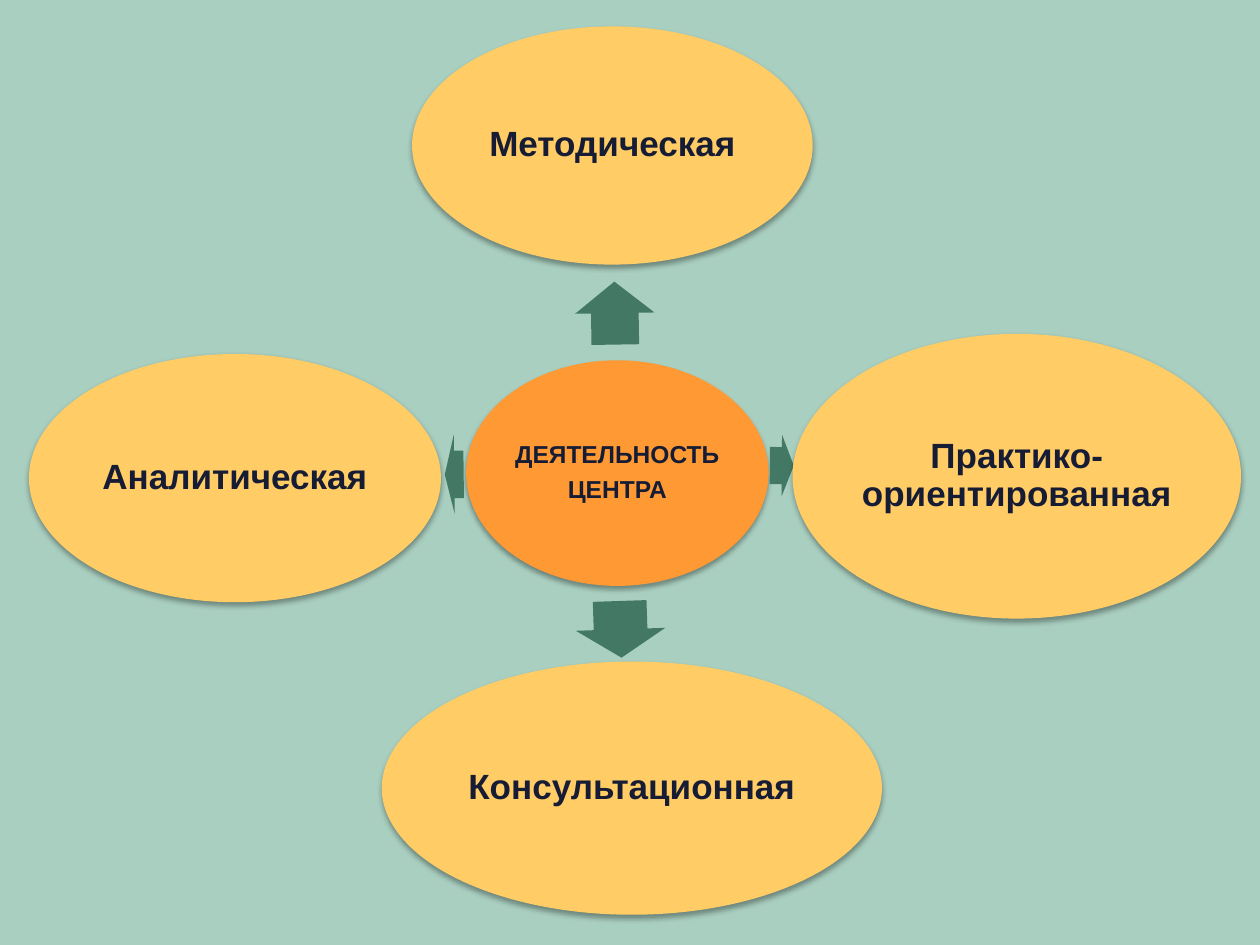
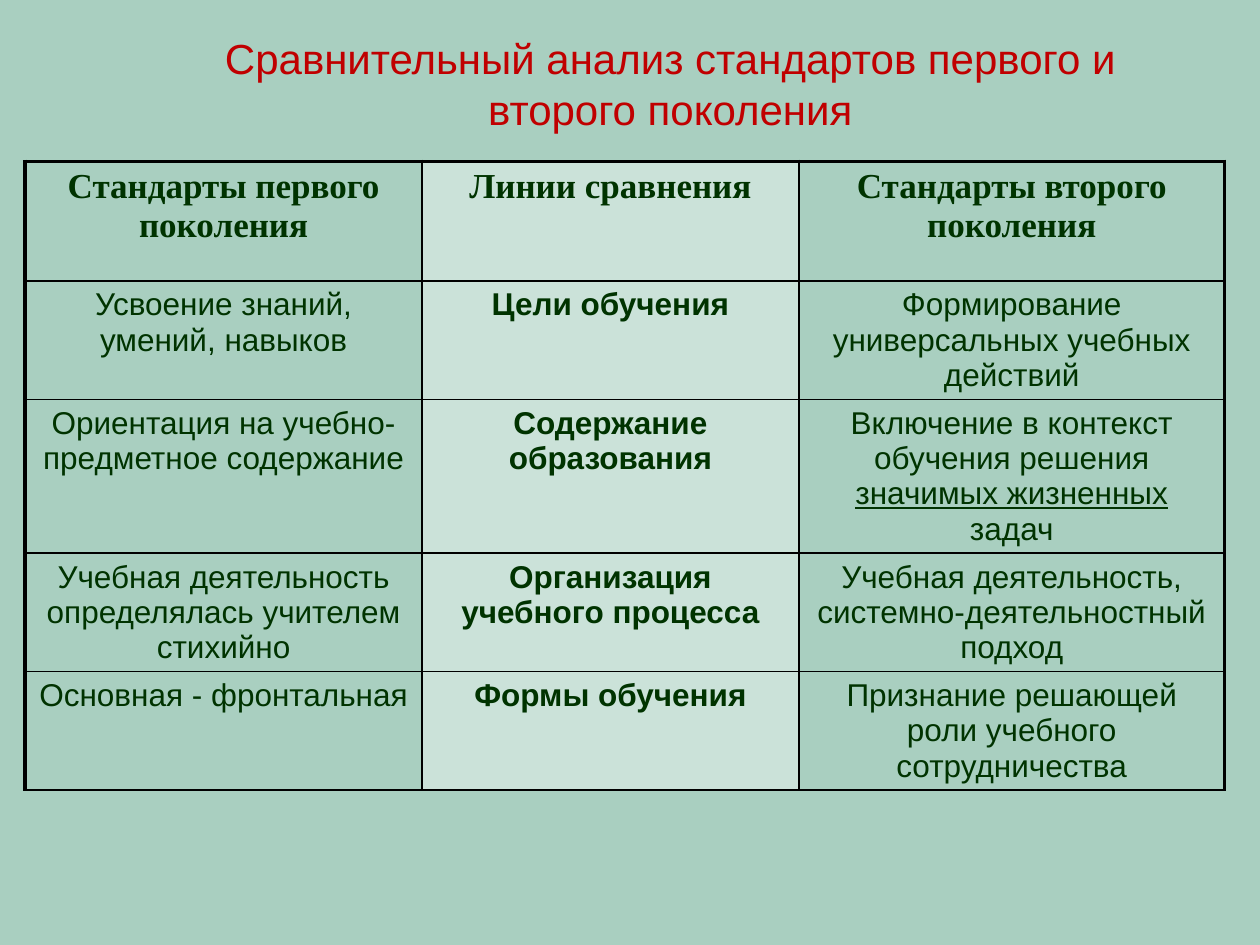
from lxml import etree
from pptx import Presentation
from pptx.dml.color import RGBColor
from pptx.enum.shapes import MSO_SHAPE
from pptx.enum.text import MSO_ANCHOR, MSO_AUTO_SIZE, PP_ALIGN
from pptx.oxml.ns import qn
from pptx.util import Inches, Pt

ELLIPSE = MSO_SHAPE.OVAL
ARROW = MSO_SHAPE.RIGHT_ARROW
CENTER = PP_ALIGN.CENTER
MIDDLE = MSO_ANCHOR.MIDDLE
TOP = MSO_ANCHOR.TOP
NO_FIT = MSO_AUTO_SIZE.NONE

MINT = RGBColor(0xA9, 0xCF, 0xC0)
PALE_MINT = RGBColor(0xCB, 0xE2, 0xD9)
ORANGE = RGBColor(0xFF, 0x99, 0x33)
YELLOW = RGBColor(0xFF, 0xCC, 0x66)
GREEN = RGBColor(0x43, 0x79, 0x64)
DARK_GREEN = RGBColor(0x00, 0x33, 0x00)
NAVY = RGBColor(0x17, 0x1C, 0x35)
RED = RGBColor(0xC0, 0x00, 0x00)
BLACK = RGBColor(0x00, 0x00, 0x00)

SANS = "Arial"
SERIF = "Times New Roman"
TITLE_ONLY, BLANK = 5, 6

# Each activity: text, ellipse box, arrow box, arrow rotation
CENTRE_BOX = (3.7, 2.86, 2.4, 1.79)
ACTIVITIES = [
    ("Методическая", (3.27, 0.21, 3.18, 1.89), (4.63, 2.17, 0.5, 0.63), 269.1),
    ("Практико-ориентированная", (6.29, 2.65, 3.56, 2.26), (6.11, 3.45, 0.19, 0.49), 0.5),
    ("Консультационная", (3.03, 5.25, 3.97, 2.01), (4.7, 4.64, 0.45, 0.71), 88.1),
    ("Аналитическая", (0.23, 2.81, 3.27, 1.97), (3.53, 3.45, 0.15, 0.63), 179.3),
]

TITLE = "Сравнительный анализ стандартов первого и второго поколения"
TITLE_BOX = (1.46, 0.21, 7.72, 0.91)
TABLE_BOX = (0.2, 1.28, 9.52, 4.99)
COLUMN_WIDTHS = [3.15, 2.99, 3.38]
ROW_HEIGHTS = [0.95, 0.94, 1.22, 0.94, 0.94]
UNDERLINED = "значимых жизненных "
ROWS = [
    ("Стандарты первого поколения", "Линии сравнения", "Стандарты второго поколения"),
    ("Усвоение знаний, умений, навыков", "Цели обучения",
     "Формирование универсальных учебных действий"),
    ("Ориентация на учебно-предметное содержание", "Содержание образования",
     "Включение в контекст обучения решения значимых жизненных задач"),
    ("Учебная деятельность определялась учителем стихийно",
     "Организация учебного процесса",
     "Учебная деятельность, системно-деятельностный подход"),
    ("Основная - фронтальная", "Формы обучения",
     "Признание решающей роли учебного сотрудничества"),
]


def inches(box):
    return [Inches(length) for length in box]


def format_font(font, name, size, color, bold=False):
    font.name = name
    font.size = Pt(size)
    font.bold = bold
    font.color.rgb = color


def add_solid(page, preset, box, color):
    shape = page.shapes.add_shape(preset, *inches(box))
    shape.shadow.inherit = False
    shape.fill.solid()
    shape.fill.fore_color.rgb = color
    shape.line.fill.background()
    return shape


def add_soft_shadow(shape):
    effects = shape._element.spPr.find(qn("a:effectLst"))
    shadow = etree.SubElement(effects, qn("a:outerShdw"), blurRad=str(Pt(3.1)),
                              dist=str(Pt(1.8)), dir="5400000", rotWithShape="0")
    color = etree.SubElement(shadow, qn("a:srgbClr"), val=str(BLACK))
    etree.SubElement(color, qn("a:alpha"), val="35000")


def add_bubble(page, box, text, color, size):
    bubble = add_solid(page, ELLIPSE, box, color)
    add_soft_shadow(bubble)
    frame = bubble.text_frame
    frame.word_wrap = True
    frame.vertical_anchor = MIDDLE
    frame.margin_left = frame.margin_right = Inches(0.03)
    frame.margin_top = frame.margin_bottom = Inches(0.03)
    frame.text = text
    for para in frame.paragraphs:
        para.alignment = CENTER
        para.line_spacing = 0.9
        para.space_after = Pt(5)
        for span in para.runs:
            format_font(span.font, SANS, size, NAVY, bold=True)


def add_arrow(page, box, rotation):
    arrow = add_solid(page, ARROW, box, GREEN)
    arrow.adjustments[0] = 0.6
    arrow.adjustments[1] = 0.5
    arrow.rotation = rotation


def build_activities(deck):
    page = deck.slides.add_slide(deck.slide_layouts[BLANK])
    add_bubble(page, CENTRE_BOX, "ДЕЯТЕЛЬНОСТЬ\nЦЕНТРА", ORANGE, 14)
    for text, bubble_box, arrow_box, rotation in ACTIVITIES:
        add_arrow(page, arrow_box, rotation)
        add_bubble(page, bubble_box, text, YELLOW, 20)


def set_title(page, box, text):
    title = page.shapes.title
    title.left, title.top, title.width, title.height = inches(box)
    frame = title.text_frame
    frame.text = text
    frame.word_wrap = True
    frame.auto_size = NO_FIT
    frame.vertical_anchor = TOP
    para = frame.paragraphs[0]
    para.alignment = CENTER
    format_font(para.runs[0].font, SANS, 24, RED)


def set_borders(cell, widths):
    """Draw cell edges; widths are points for left, right, top and bottom."""
    properties = cell._tc.get_or_add_tcPr()
    for edge, width in zip(("lnL", "lnR", "lnT", "lnB"), widths):
        line = etree.SubElement(properties, qn(f"a:{edge}"), w=str(Pt(width)))
        fill = etree.SubElement(line, qn("a:solidFill"))
        etree.SubElement(fill, qn("a:srgbClr"), val=str(BLACK))


def fill_cell(cell, text, is_header, is_middle):
    if is_middle:
        cell.fill.solid()
        cell.fill.fore_color.rgb = PALE_MINT
    else:
        cell.fill.background()
    para = cell.text_frame.paragraphs[0]
    para.alignment = CENTER
    name, size = (SERIF, 20) if is_header else (SANS, 18)
    for part in filter(None, text.partition(UNDERLINED)):
        span = para.add_run()
        span.text = part
        format_font(span.font, name, size, DARK_GREEN, is_header or is_middle)
        if part == UNDERLINED:
            span.font.underline = True


def add_comparison(page, box):
    table = page.shapes.add_table(len(ROWS), len(COLUMN_WIDTHS), *inches(box)).table
    table.first_row = table.horz_banding = False
    for column, width in zip(table.columns, COLUMN_WIDTHS):
        column.width = Inches(width)
    for row, height in zip(table.rows, ROW_HEIGHTS):
        row.height = Inches(height)
    last_column = len(COLUMN_WIDTHS) - 1
    for r, texts in enumerate(ROWS):
        for c, text in enumerate(texts):
            cell = table.cell(r, c)
            thick_edges = (c == 0, c == last_column, r == 0, False)
            set_borders(cell, [2.25 if thick else 1 for thick in thick_edges])
            fill_cell(cell, text, is_header=r == 0, is_middle=c == 1)


def build_standards(deck):
    page = deck.slides.add_slide(deck.slide_layouts[TITLE_ONLY])
    set_title(page, TITLE_BOX, TITLE)
    add_comparison(page, TABLE_BOX)


def main():
    deck = Presentation()
    deck.slide_width = Inches(10)
    deck.slide_height = Inches(7.5)
    background = deck.slide_master.background.fill
    background.solid()
    background.fore_color.rgb = MINT
    build_activities(deck)
    build_standards(deck)
    deck.save("out.pptx")


if __name__ == "__main__":
    main()
